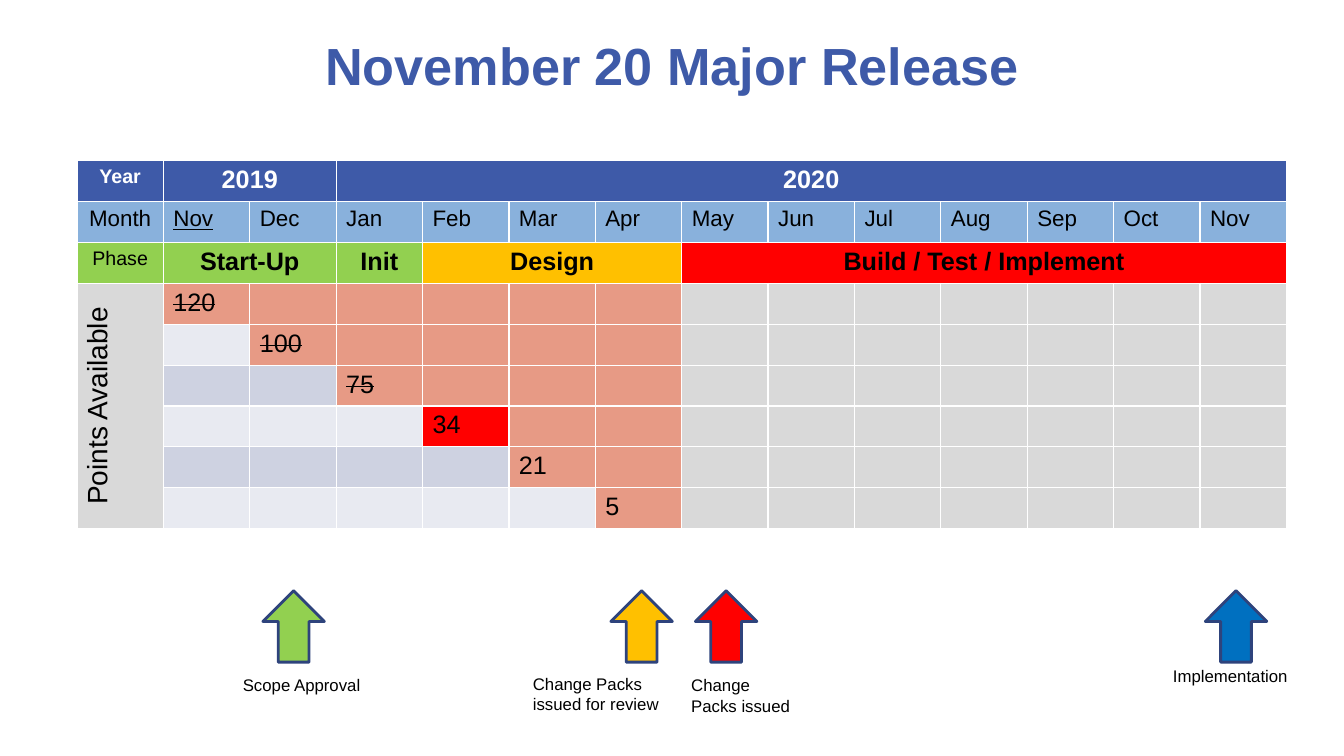
import pptx
import pptx.util
import pptx.dml.color
import pptx.enum.shapes
import pptx.enum.text

Cm = pptx.util.Cm
COLORS = {
    "blue": "3E5AA8", "sky": "89B1DC", "green": "92D050", "amber": "FFC000",
    "red": "FF0000", "ocean": "0070C0", "grey": "D9D9D9", "salmon": "E79A85",
    "pale": "E8EAF1", "lavender": "CED2E1", "navy": "2E437C",
    "white": "FFFFFF", "black": "000000",
}
CENTER = pptx.enum.text.PP_ALIGN.CENTER
LEFT = pptx.enum.text.PP_ALIGN.LEFT


def rgb(name):
    return pptx.dml.color.RGBColor.from_string(COLORS[name])


def write(text_frame, text, size, color="black", bold=False, align=LEFT):
    text_frame.text = text
    paragraph = text_frame.paragraphs[0]
    paragraph.alignment = align
    run = paragraph.runs[0]
    run.font.name = "Arial"
    run.font.size = pptx.util.Pt(size)
    run.font.bold = bold
    run.font.color.rgb = rgb(color)
    return run


presentation = pptx.Presentation()
presentation.slide_width = Cm(33.87)
presentation.slide_height = Cm(19.05)
slide = presentation.slides.add_slide(presentation.slide_layouts[5])

title = slide.shapes.title
title.left, title.top, title.width, title.height = Cm(1.7), Cm(0.46), Cm(30.48), Cm(2.36)
title.text_frame.vertical_anchor = pptx.enum.text.MSO_ANCHOR.MIDDLE
write(title.text_frame, "November 20 Major Release", 37.3, "blue", True, CENTER)

months = ["Nov", "Dec", "Jan", "Feb", "Mar", "Apr", "May",
          "Jun", "Jul", "Aug", "Sep", "Oct", "Nov"]
points = ["120", "100", "75", "34", "21", "5"]
current_row = 3
column_count = len(months) + 1
first_points_row = 3
row_count = first_points_row + len(points)

table = slide.shapes.add_table(
    row_count, column_count, Cm(1.94), Cm(4.05), Cm(30.48), Cm(9.27)).table
for column in table.columns:
    column.width = Cm(30.48 / column_count)
for row in table.rows:
    row.height = Cm(1.03)
table.rows[row_count - 1].height = Cm(0.99)

bands = [
    (0, 0, 1, 1, "Year", 14, "white", True, "blue"),
    (0, 1, 1, 2, "2019", 18, "white", True, "blue"),
    (0, 3, 1, 11, "2020", 18, "white", True, "blue"),
    (1, 0, 1, 1, "Month", 16, "black", False, "sky"),
    (2, 0, 1, 1, "Phase", 14, "black", False, "green"),
    (2, 1, 1, 2, "Start-Up", 18, "black", True, "green"),
    (2, 3, 1, 1, "Init", 18, "black", True, "green"),
    (2, 4, 1, 3, "Design", 18, "black", True, "amber"),
    (2, 7, 1, 7, "Build / Test / Implement", 18, "black", True, "red"),
    (3, 0, 6, 1, "Points Available", 20, "black", False, "grey"),
]
for row, column, height, width, text, size, color, bold, fill in bands:
    cell = table.cell(row, column)
    if height * width > 1:
        cell.merge(table.cell(row + height - 1, column + width - 1))
    cell.fill.solid()
    cell.fill.fore_color.rgb = rgb(fill)
    write(cell.text_frame, text, size, color, bold, CENTER)
table.cell(first_points_row, 0)._tc.get_or_add_tcPr().set("vert", "vert270")

for column, month in enumerate(months, 1):
    cell = table.cell(1, column)
    cell.fill.solid()
    cell.fill.fore_color.rgb = rgb("sky")
    run = write(cell.text_frame, month, 16)
    run.font.underline = column == 1

for index, value in enumerate(points):
    for month_index in range(len(months)):
        cell = table.cell(first_points_row + index, month_index + 1)
        if month_index >= len(points):
            fill = "grey"
        elif month_index < index:
            fill = "pale" if index % 2 else "lavender"
        elif month_index == index == current_row:
            fill = "red"
        else:
            fill = "salmon"
        cell.fill.solid()
        cell.fill.fore_color.rgb = rgb(fill)
        if month_index == index:
            run = write(cell.text_frame, value, 18)
            if index < current_row:
                run.font._element.set("strike", "sngStrike")

milestones = [
    ("Scope Approval", "green", 6.5, 5.87, 16.89, 3.51, 0.76),
    ("Change Packs issued for review", "amber", 15.27, 13.18, 16.84, 4.01, 1.27),
    ("Change Packs issued", "red", 17.4, 17.17, 16.89, 3.25, 1.27),
    ("Implementation", "ocean", 30.25, 29.31, 16.66, 3.71, 0.76),
]
for text, color, arrow_left, left, top, width, height in milestones:
    arrow = slide.shapes.add_shape(
        pptx.enum.shapes.MSO_SHAPE.RIGHT_ARROW,
        Cm(arrow_left), Cm(15.01), Cm(1.8), Cm(1.55))
    arrow.rotation = 270
    arrow.shadow.inherit = False
    arrow.fill.solid()
    arrow.fill.fore_color.rgb = rgb(color)
    arrow.line.color.rgb = rgb("navy")
    arrow.line.width = pptx.util.Pt(2)

    label = slide.shapes.add_textbox(Cm(left), Cm(top), Cm(width), Cm(height))
    label.text_frame.word_wrap = True
    label.text_frame.auto_size = pptx.enum.text.MSO_AUTO_SIZE.SHAPE_TO_FIT_TEXT
    write(label.text_frame, text, 12)

presentation.save("out.pptx")
